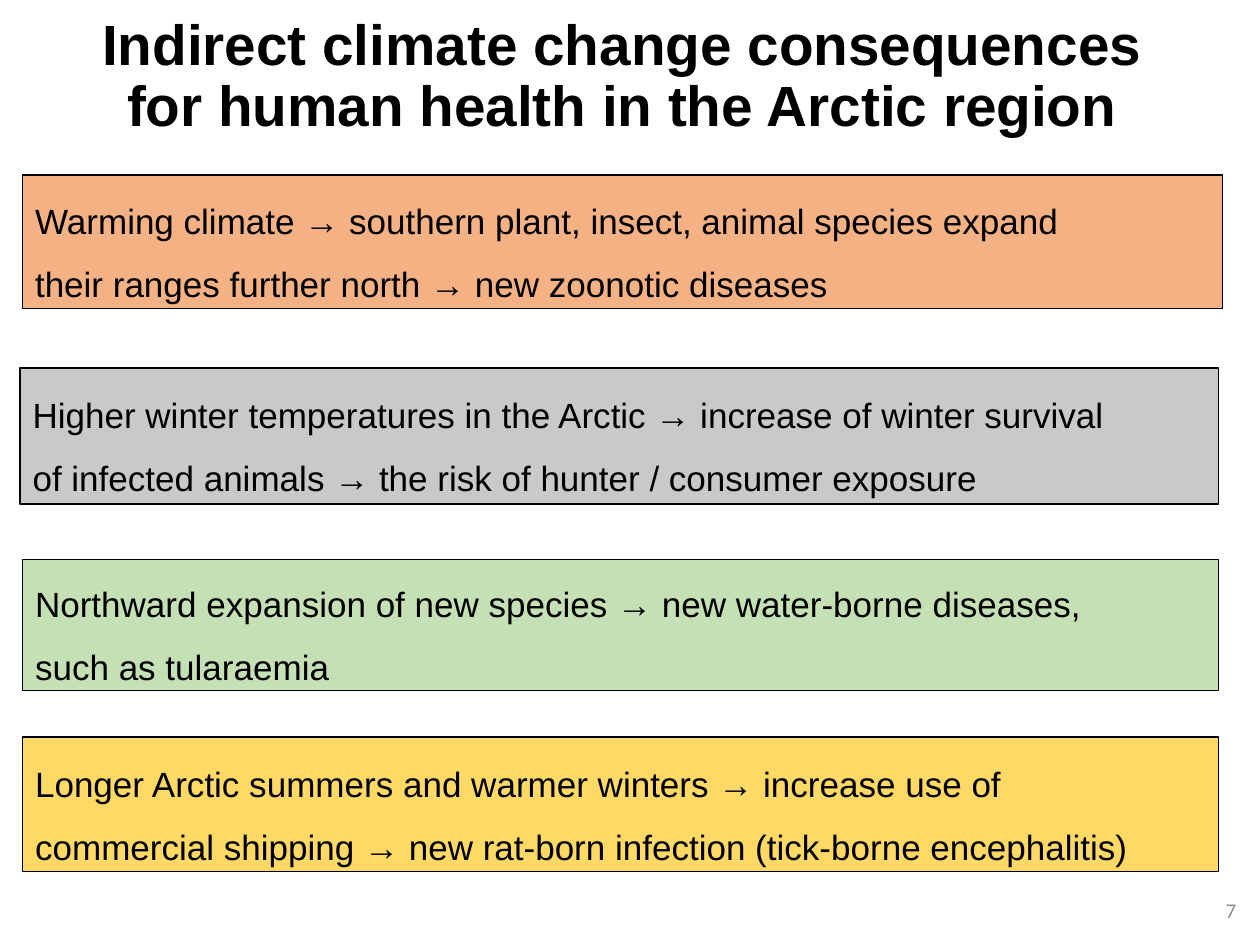
from pptx import Presentation
from pptx import util as u
from pptx.dml.color import RGBColor
from pptx.enum import shapes, text

HUES = {
    "ink": "000000",
    "page": "8C8C8C",
    "warm": "F4B183",
    "winter": "C9C9C9",
    "north": "C5E0B4",
    "ship": "FFD966",
}


class Deck:
    def __init__(self, font):
        self.font = font
        self.prs = Presentation()
        self.prs.slide_width = u.Inches(10)
        self.prs.slide_height = u.Inches(7.5)
        self.slide = self.prs.slides.add_slide(self.prs.slide_layouts[5])

    def hue(self, name):
        return RGBColor.from_string(HUES[name])

    def run(self, para, words, size, hue="ink", bold=False, font=None):
        run = para.add_run()
        run.text = words
        run.font.name = font or self.font
        run.font.size = u.Pt(size)
        run.font.bold = bold
        run.font.color.rgb = self.hue(hue)

    def frame(self, shape):
        frame = shape.text_frame
        frame.word_wrap = True
        frame.auto_size = text.MSO_AUTO_SIZE.NONE
        frame.vertical_anchor = text.MSO_ANCHOR.MIDDLE
        return frame

    def title(self, box, lines):
        shape = self.slide.shapes.title
        shape.left, shape.top, shape.width, shape.height = map(u.Inches, box)
        para = self.frame(shape).paragraphs[0]
        para.alignment = text.PP_ALIGN.CENTER
        para.line_spacing = 0.9
        para.space_before = u.Pt(0)
        for i, line in enumerate(lines):
            if i:
                para.add_line_break()
            self.run(para, line, 32.4, bold=True)

    def panel(self, box, hue, lines):
        shape = self.slide.shapes.add_shape(
            shapes.MSO_SHAPE.RECTANGLE, *map(u.Inches, box))
        shape.shadow.inherit = False
        shape.fill.solid()
        shape.fill.fore_color.rgb = self.hue(hue)
        shape.line.color.rgb = self.hue("ink")
        shape.line.width = u.Pt(0.75)
        frame = self.frame(shape)
        for i, line in enumerate(lines):
            para = frame.add_paragraph() if i else frame.paragraphs[0]
            para.alignment = text.PP_ALIGN.LEFT
            para.line_spacing = 1.5
            self.run(para, line, 20)

    def number(self, box, words):
        shape = self.slide.shapes.add_textbox(*map(u.Inches, box))
        para = self.frame(shape).paragraphs[0]
        para.alignment = text.PP_ALIGN.RIGHT
        self.run(para, words, 12, "page", font="Calibri")


def main():
    deck = Deck("Arial")
    deck.title((0.69, 0.32, 8.62, 0.59), [
        "Indirect climate change consequences ",
        "for human health in the Arctic region "])
    panels = [
        ((0.18, 1.39, 9.52, 1.06), "warm", [
            "Warming climate → southern plant, insect, animal species expand",
            "their ranges further north → new zoonotic diseases"]),
        ((0.16, 2.92, 9.51, 1.08), "winter", [
            "Higher winter temperatures in the Arctic → increase of winter survival",
            "of infected animals → the risk of hunter / consumer exposure"]),
        ((0.18, 4.44, 9.49, 1.04), "north", [
            "Northward expansion of new species → new water-borne diseases,",
            "such as tularaemia"]),
        ((0.18, 5.85, 9.49, 1.07), "ship", [
            "Longer Arctic summers and warmer winters → increase use of",
            "commercial shipping → new rat-born infection (tick-borne encephalitis)"]),
    ]
    for box, hue, lines in panels:
        deck.panel(box, hue, lines)
    deck.number((7.66, 7.02, 2.25, 0.4), "7")
    deck.prs.save("out.pptx")


if __name__ == "__main__":
    main()
